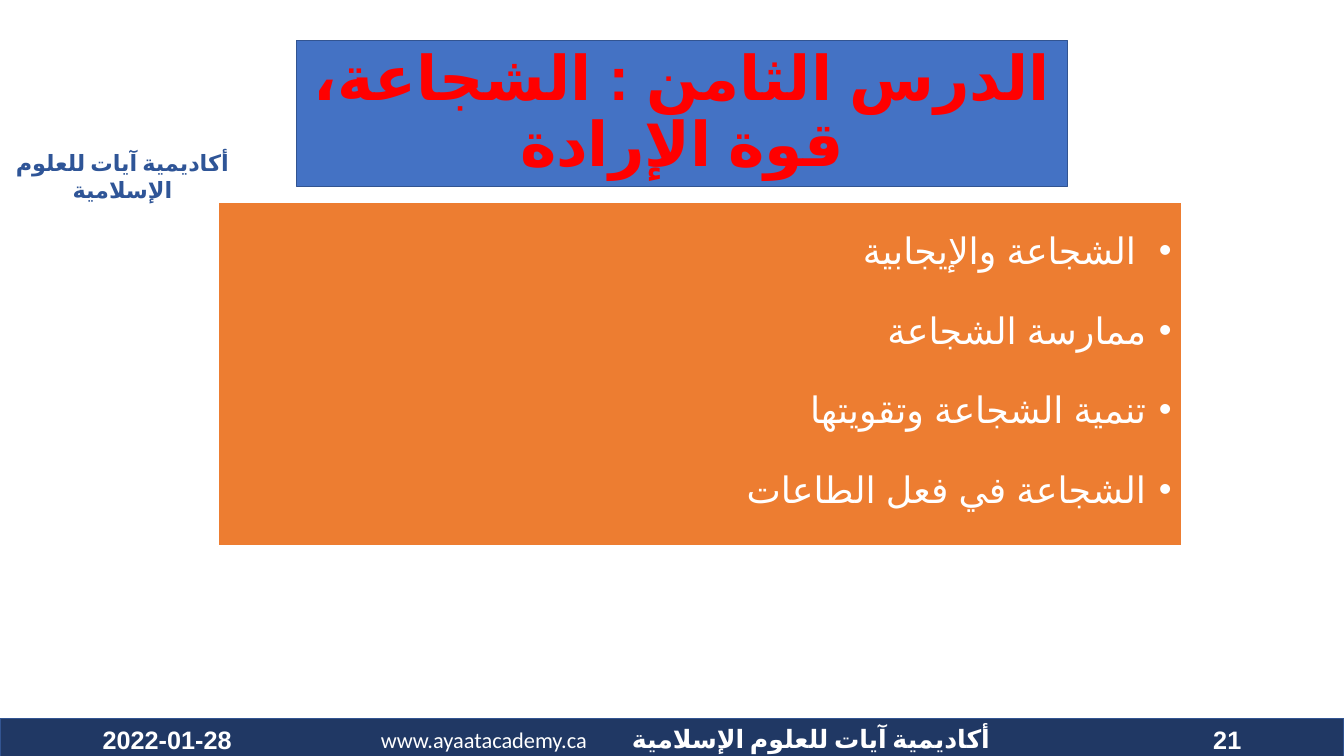
from dataclasses import dataclass

from lxml.etree import SubElement
from pptx import Presentation
from pptx.dml.color import RGBColor as Rgb
from pptx.enum.lang import MSO_LANGUAGE_ID as Language
from pptx.enum.shapes import MSO_SHAPE as Preset
from pptx.enum.text import MSO_ANCHOR as Anchor, MSO_AUTO_SIZE as AutoSize, PP_ALIGN as Align
from pptx.oxml.ns import qn
from pptx.util import Inches, Pt

COLORS = {
    "navy": "203864", "edge": "325491", "blue": "4472C4", "red": "FF0000",
    "orange": "ED7D31", "white": "FFFFFF", "academy": "2F5597",
}
ACADEMY = "أكاديمية آيات للعلوم الإسلامية"
TOPICS = [
    "\N{NO-BREAK SPACE}الشجاعة والإيجابية",
    "ممارسة الشجاعة",
    "تنمية الشجاعة وتقويتها",
    "الشجاعة في فعل الطاعات",
]


@dataclass(frozen=True)
class Style:
    size: float
    color: str
    font: str = "Arial"
    bold: bool = True
    align: Align = Align.CENTER
    rtl: bool = False
    spacing: float = 1.0
    language: Language = Language.ARABIC


@dataclass(frozen=True)
class Label:
    text: str
    box: tuple[float, float, float, float]
    style: Style
    anchor: Anchor = Anchor.MIDDLE


def color(name: str) -> Rgb:
    return Rgb.from_string(COLORS[name])


def place(shape, box: tuple[float, float, float, float]) -> None:
    for side, length in zip(("left", "top", "width", "height"), box):
        setattr(shape, side, Inches(length))


def paint(shape, fill: str, edge: str, width: float) -> None:
    shape.fill.solid()
    shape.fill.fore_color.rgb = color(fill)
    shape.line.color.rgb = color(edge)
    shape.line.width = Pt(width)


def write(frame, lines: list[str], style: Style, anchor: Anchor, bullets: bool = False) -> None:
    frame_format = {"word_wrap": True, "auto_size": AutoSize.NONE, "vertical_anchor": anchor}
    for name, value in frame_format.items():
        setattr(frame, name, value)
    for index, line in enumerate(lines):
        paragraph = frame.paragraphs[0] if index == 0 else frame.add_paragraph()
        properties = paragraph._p.get_or_add_pPr()
        properties.set("rtl", str(int(style.rtl)))
        if bullets:
            properties.set("marR", "0")
            properties.set("marL", str(Inches(0.25)))
            properties.set("indent", str(Inches(-0.25)))
            SubElement(properties, qn("a:buFont")).set("typeface", "Arial")
            SubElement(properties, qn("a:buChar")).set("char", "•")
        paragraph_format = {
            "alignment": style.align,
            "line_spacing": style.spacing,
            "space_before": Pt(10 if index else 0),
        }
        for name, value in paragraph_format.items():
            setattr(paragraph, name, value)
        run = paragraph.add_run()
        run.text = line
        run_format = {
            "name": style.font, "size": Pt(style.size), "bold": style.bold,
            "language_id": style.language,
        }
        for name, value in run_format.items():
            setattr(run.font, name, value)
        run.font.color.rgb = color(style.color)
        # Arabic letters take the complex-script font
        SubElement(run._r.get_or_add_rPr(), qn("a:cs")).set("typeface", style.font)


def add_label(slide, label: Label) -> None:
    box = slide.shapes.add_textbox(*map(Inches, label.box))
    write(box.text_frame, [label.text], label.style, label.anchor)


def main() -> None:
    deck = Presentation()
    deck.slide_width, deck.slide_height = Inches(13.33), Inches(7.5)
    slide = deck.slides.add_slide(deck.slide_layouts[1])

    # Lesson title
    lesson = slide.shapes.title
    place(lesson, (2.94, 0.4, 7.65, 1.45))
    paint(lesson, "blue", "edge", 1)
    write(lesson.text_frame, ["الدرس الثامن : الشجاعة، قوة الإرادة"],
          Style(44, "red", rtl=True, spacing=0.9), Anchor.MIDDLE)

    # Lesson topics
    topics = slide.placeholders[1]
    place(topics, (2.16, 2, 9.56, 3.42))
    paint(topics, "orange", "white", 1.5)
    write(topics.text_frame, TOPICS,
          Style(26, "white", bold=False, align=Align.RIGHT, rtl=True, spacing=1.5),
          Anchor.TOP, bullets=True)

    # Footer bar
    footer = slide.shapes.add_shape(Preset.RECTANGLE, *map(Inches, (0, 7.13, 13.33, 0.4)))
    footer.shadow.inherit = False
    paint(footer, "navy", "edge", 1)

    # Academy name and footer texts
    english = Language.ENGLISH_US
    labels = [
        Label(ACADEMY, (-0.14, 1.43, 2.71, 0.65),
              Style(16, "academy", "Calibri"), Anchor.TOP),
        Label(ACADEMY, (5.92, 7.13, 4, 0.4),
              Style(18, "white", "Calibri", align=Align.RIGHT, rtl=True)),
        Label("www.ayaatacademy.ca", (3.68, 7.14, 2.4, 0.4),
              Style(16, "white", "Calibri", bold=False, align=Align.LEFT, language=english)),
        Label("2022-01-28", (0.92, 7.14, 3, 0.4),
              Style(18, "white", align=Align.LEFT, language=english)),
        Label("21", (9.41, 7.14, 3, 0.4),
              Style(18, "white", align=Align.RIGHT, language=english)),
    ]
    for label in labels:
        add_label(slide, label)

    deck.save("out.pptx")


if __name__ == "__main__":
    main()
